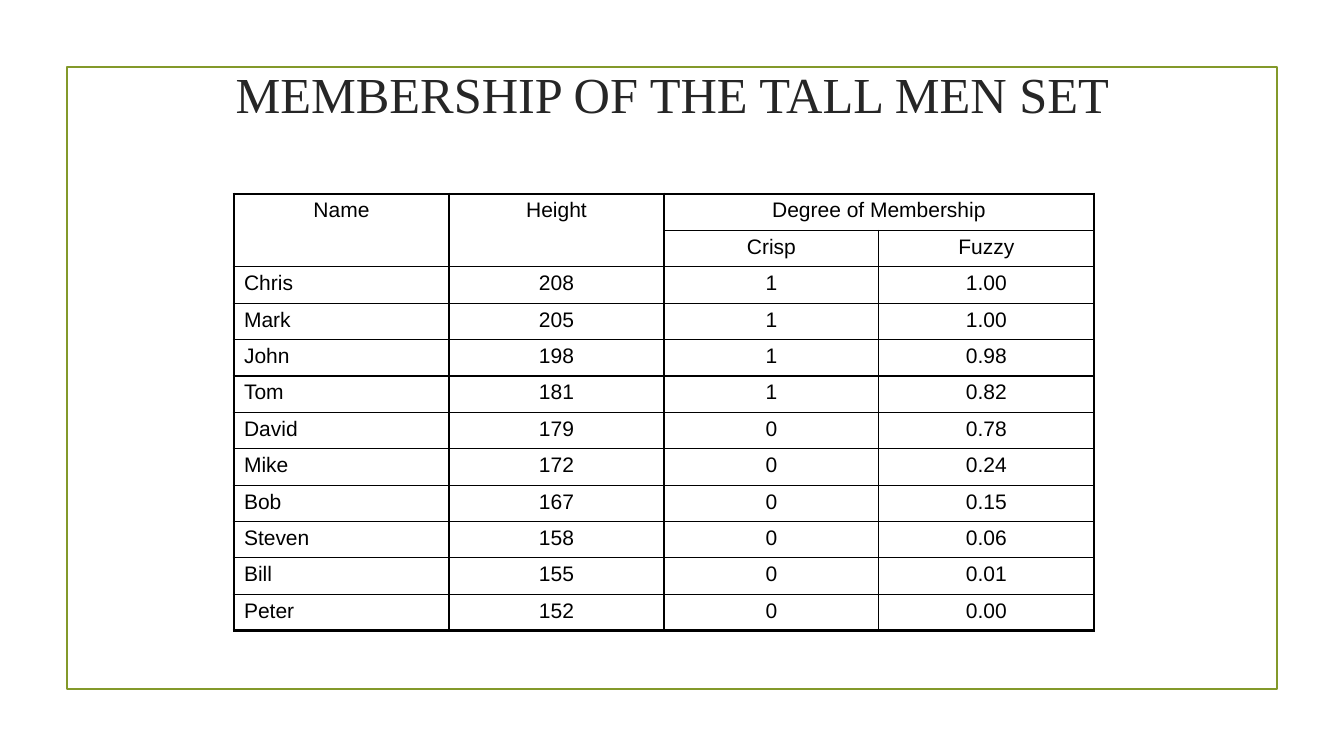
import pptx
import pptx.dml.color
import pptx.enum.shapes
import pptx.enum.text
import pptx.oxml
import pptx.oxml.ns
import pptx.util

SCALE = 914400 / 100.8
ALIGN = pptx.enum.text.PP_ALIGN
BLACK = "000000"
THIN, THICK = 1, 2.25

HEADS = [("Name", "Height", "Degree of Membership", ""),
         ("", "", "Crisp", "Fuzzy")]
MEN = [
    ("Chris", "208", "1", "1.00"),
    ("Mark", "205", "1", "1.00"),
    ("John", "198", "1", "0.98"),
    ("Tom", "181", "1", "0.82"),
    ("David", "179", "0", "0.78"),
    ("Mike", "172", "0", "0.24"),
    ("Bob", "167", "0", "0.15"),
    ("Steven", "158", "0", "0.06"),
    ("Bill", "155", "0", "0.01"),
    ("Peter", "152", "0", "0.00"),
]


def px(count):
    return pptx.util.Emu(round(count * SCALE))


def color(code):
    return pptx.dml.color.RGBColor.from_string(code)


def write(frame, text, size, font, code, align):
    para = frame.paragraphs[0]
    para.alignment = align
    run = para.add_run()
    run.text = text
    run.font.size = pptx.util.Pt(size)
    run.font.name = font
    run.font.bold = False
    run.font.color.rgb = color(code)


def add_frame(slide, left, top, width, height):
    rect = slide.shapes.add_shape(
        pptx.enum.shapes.MSO_SHAPE.RECTANGLE,
        px(left), px(top), px(width), px(height))
    rect.shadow.inherit = False
    rect.fill.background()
    rect.line.color.rgb = color("83992A")
    rect.line.width = pptx.util.Pt(1.25)


def set_title(slide, text, left, top, width, height):
    title = slide.shapes.title
    title.left, title.top = px(left), px(top)
    title.width, title.height = px(width), px(height)
    frame = title.text_frame
    frame.word_wrap = True
    frame.vertical_anchor = pptx.enum.text.MSO_ANCHOR.MIDDLE
    write(frame, text, 36, "Times New Roman", "262626", ALIGN.CENTER)


def add_edge(cell, side, points):
    line = pptx.oxml.parse_xml(
        f'<a:ln{side} {pptx.oxml.ns.nsdecls("a")} w="{pptx.util.Pt(points)}">'
        f'<a:solidFill><a:srgbClr val="{BLACK}"/></a:solidFill></a:ln{side}>')
    cell._tc.get_or_add_tcPr().append(line)


def add_grid(slide, rows, left, top, width, height):
    count, cols = len(rows), len(rows[0])
    table = slide.shapes.add_table(
        count, cols, px(left), px(top), px(width), px(height)).table
    table.first_row = table.horz_banding = False

    # Joined heading cells
    table.cell(0, 0).merge(table.cell(1, 0))
    table.cell(0, 1).merge(table.cell(1, 1))
    table.cell(0, 2).merge(table.cell(0, 3))

    for r, row in enumerate(rows):
        for c, text in enumerate(row):
            cell = table.cell(r, c)
            # Thick lines run round the outside only
            last = c + (cell.span_width if cell.is_merge_origin else 1)
            outer = {"L": c == 0, "R": last == cols,
                     "T": r == 0, "B": r == count - 1}
            for side, thick in outer.items():
                add_edge(cell, side, THICK if thick else THIN)
            cell.fill.background()
            if text:
                name = c == 0 and r >= len(HEADS)
                write(cell.text_frame, text, 15, "Arial", BLACK,
                      ALIGN.LEFT if name else ALIGN.CENTER)


def main():
    deck = pptx.Presentation()
    deck.slide_width, deck.slide_height = px(1344), px(756)
    slide = deck.slides.add_slide(deck.slide_layouts[5])
    add_frame(slide, 67, 67, 1210, 622)
    set_title(slide, "MEMBERSHIP OF THE TALL MEN SET", 219, 30, 907, 126)
    add_grid(slide, HEADS + MEN, 234, 194, 860, 437)
    deck.save("out.pptx")


if __name__ == "__main__":
    main()
